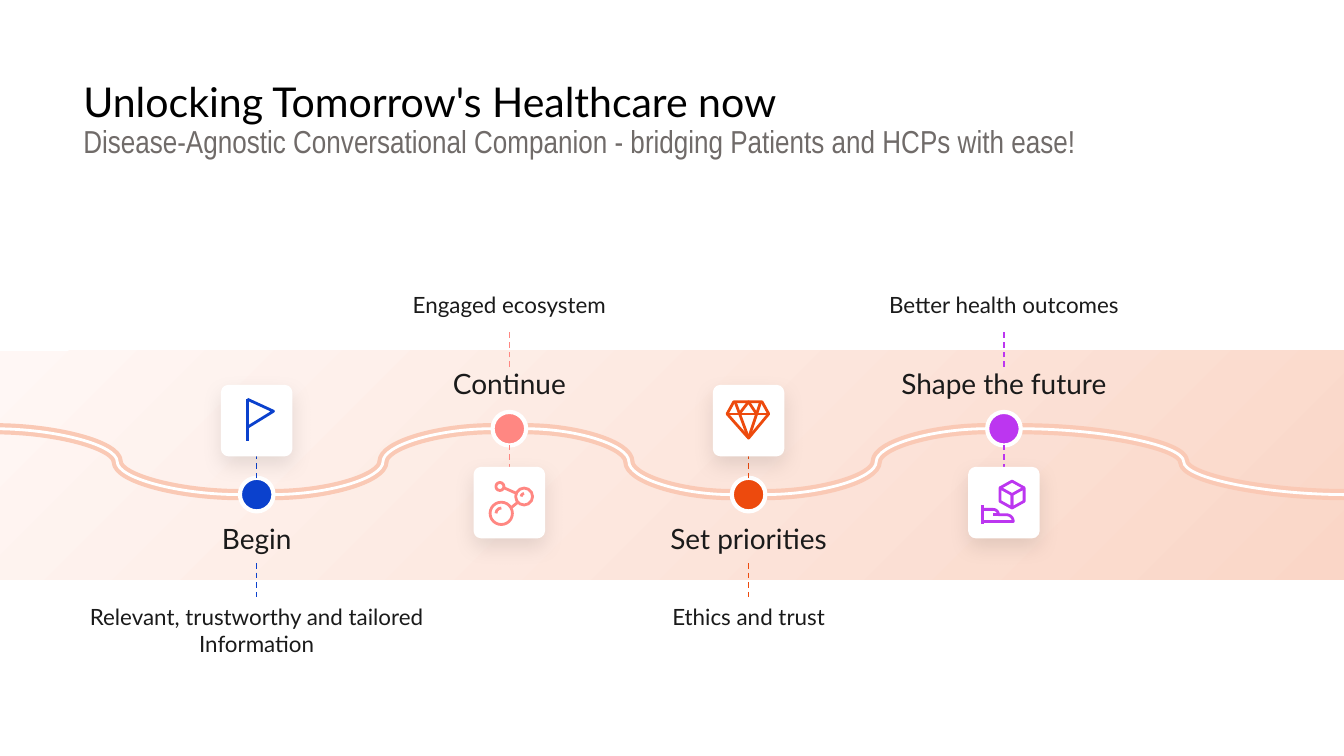
from collections import namedtuple
from math import cos, pi, sin

from lxml import etree
from pptx import Presentation
from pptx.dml.color import RGBColor
from pptx.enum.dml import MSO_LINE
from pptx.enum.shapes import MSO_CONNECTOR as Connector, MSO_SHAPE as Preset
from pptx.enum.text import MSO_ANCHOR, MSO_AUTO_SIZE, PP_ALIGN
from pptx.oxml.ns import qn
from pptx.util import Inches, Pt

# Grid: 100 columns by 56.25 square rows
COLUMNS, ROWS = 100, 56.25
HIGH, LOW = 31.9, 36.8          # the two levels of the wave
NODE, CARD, LABEL = 2.5, 5, 28.9

BLACK = RGBColor(0x00, 0x00, 0x00)
WHITE = RGBColor(0xFF, 0xFF, 0xFF)
INK = RGBColor(0x1A, 0x1A, 0x1A)
GREY = RGBColor(0x70, 0x6B, 0x69)
BLUSH = RGBColor(0xFF, 0xF7, 0xF5)
PEACH = RGBColor(0xFA, 0xD6, 0xC7)
WAVE = RGBColor(0xFA, 0xC9, 0xB5)
BLUE = RGBColor(0x0B, 0x41, 0xCD)
CORAL = RGBColor(0xFF, 0x87, 0x82)
ORANGE = RGBColor(0xED, 0x4A, 0x0D)
PURPLE = RGBColor(0xBC, 0x36, 0xF0)

# Rows of the parts of a milestone, by its level on the wave
Level = namedtuple("Level", "node heading caption card stem leader")
LEVELS = {
    LOW: Level(LOW, 38.8, 43.9, 28.8, (35.6, 33.7), (41.9, 44.4)),
    HIGH: Level(HIGH, 27.3, 20.7, 34.9, (33.1, 34.9), (27.3, 24.7)),
}


def grid(*units):
    """Turn grid units into lengths."""
    return [Inches(unit * 10 / COLUMNS) for unit in units]


def write(frame, text, font="Lato", size=12, color=INK, align=PP_ALIGN.LEFT,
          insets=(0, 0, 0, 0), spacing=None, after=None):
    frame.word_wrap = True
    frame.auto_size = MSO_AUTO_SIZE.NONE
    frame.vertical_anchor = MSO_ANCHOR.TOP
    (frame.margin_left, frame.margin_top,
     frame.margin_right, frame.margin_bottom) = grid(*insets)
    frame.text = text
    paragraph = frame.paragraphs[0]
    paragraph.alignment = align
    if spacing:
        paragraph.line_spacing = spacing
    if after:
        paragraph.space_after = Pt(after)
    run_font = paragraph.runs[0].font
    run_font.name, run_font.size, run_font.color.rgb = font, Pt(size), color


def add_label(slide, text, center, top, height, **style):
    box = slide.shapes.add_textbox(*grid(center - LABEL / 2, top, LABEL, height))
    write(box.text_frame, text, align=PP_ALIGN.CENTER, after=10, **style)


def add_preset(shapes, kind, box, fill=None, line=None, width=2.25):
    shape = shapes.add_shape(kind, *grid(*box))
    shape.shadow.inherit = False
    if fill is None:
        shape.fill.background()
    else:
        shape.fill.solid()
        shape.fill.fore_color.rgb = fill
    if line is None:
        shape.line.fill.background()
    else:
        shape.line.color.rgb, shape.line.width = line, Pt(width)
    return shape


def add_line(shapes, start, end, color, width, kind=Connector.STRAIGHT, dash=None):
    line = shapes.add_connector(kind, *grid(*start, *end))
    line.line.color.rgb, line.line.width = color, Pt(width)
    if dash:
        line.line.dash_style = dash
    etree.SubElement(line._element.spPr, qn("a:effectLst"))


def add_card(slide, center, top):
    card = add_preset(slide.shapes, Preset.ROUNDED_RECTANGLE,
                      (center - CARD / 2, top, CARD, CARD), WHITE, WHITE)
    card.adjustments[0] = 0.08
    effects = card._element.spPr.find(qn("a:effectLst"))
    shadow = etree.SubElement(effects, qn("a:outerShdw"), blurRad=str(Pt(11.2)),
                              dist=str(Pt(4.5)), dir="5400000", rotWithShape="0")
    tint = etree.SubElement(shadow, qn("a:srgbClr"), val=str(BLACK))
    etree.SubElement(tint, qn("a:alpha"), val="10000")


class Icon:
    """A group of strokes placed around the middle of a card."""

    def __init__(self, slide, x, y, color):
        self.shapes = slide.shapes.add_group_shape().shapes
        self.x, self.y, self.color = x, y, color

    def stroke(self, *points, close=False):
        points = [(self.x + x, self.y + y) for x, y in points]
        if len(points) == 2:
            add_line(self.shapes, *points, self.color, 1.5)
            return
        start, *others = [grid(*point) for point in points]
        builder = self.shapes.build_freeform(*start)
        builder.add_line_segments(others, close=close)
        shape = builder.convert_to_shape()
        shape.shadow.inherit = False
        shape.fill.background()
        shape.line.color.rgb, shape.line.width = self.color, Pt(1.5)

    def ring(self, x, y, radius, kind=Preset.OVAL):
        box = (self.x + x - radius, self.y + y - radius, 2 * radius, 2 * radius)
        return add_preset(self.shapes, kind, box, line=self.color, width=1.5)

    def glint(self, x, y, radius):
        arc = self.ring(x, y, radius, Preset.ARC)
        arc.adjustments[0], arc.adjustments[1] = 108, 162  # 180 to 270 degrees


def quarter(x, y, radius, steps=6):
    """Points of a quarter circle, from its right end up to its top."""
    angles = [pi / 2 * step / steps for step in range(steps + 1)]
    return [(x + radius * cos(angle), y - radius * sin(angle)) for angle in angles]


def draw_flag(icon):
    icon.stroke((-0.7, -1.6), (-0.7, 1.5))
    icon.stroke((-0.7, 0.5), (1.25, -0.7), (-0.7, -1.6))


def draw_molecule(icon):
    for x, y, radius in ((-0.6, 0.8, 0.83), (1.1, -0.45, 0.63), (-0.7, -1.2, 0.3)):
        icon.ring(x, y, radius)
    icon.glint(-0.6, 0.8, 0.4)
    icon.glint(1.1, -0.45, 0.22)
    icon.stroke((0.1, 0.4), (0.6, 0))
    icon.stroke((0.5, -0.7), (-0.4, -1.1))


def draw_diamond(icon):
    icon.stroke((-1.1, -1.4), (1, -1.4), (1.5, -0.5), (0, 1.3), (-1.6, -0.5), close=True)
    for x in (-1, 0.9):
        icon.stroke((x, -1.4), (0, 1.3))
    icon.stroke((-1.6, -0.5), (1.5, -0.5))
    icon.stroke((-0.7, -0.5), (0, -1.4), (0.6, -0.5))


def draw_offered_box(icon):
    for side in (-0.3, 1.5):
        icon.stroke((0.6, -0.6), (side, -1.1), (side, -0.1), (0.6, 0.4), close=True)
    icon.stroke((1.5, -1.1), (0.6, -1.6), (-0.3, -1.1))
    icon.stroke((-1.6, 0.2), (-1.6, 1.6))
    icon.stroke((-1.6, 1.4), *quarter(0.2, 1.4, 0.5), *quarter(-0.8, 0.9, 0.4), (-1.6, 0.5))
    icon.stroke((-0.8, 0.9), (-0.4, 0.9))


# Column, level, colour, heading, caption, caption height, icon
MILESTONES = [
    (19.1, LOW, BLUE, "Begin",
     "Relevant, trustworthy and tailored Information", 6.1, draw_flag),
    (37.9, HIGH, CORAL, "Continue", "Engaged ecosystem", 4, draw_molecule),
    (55.7, LOW, ORANGE, "Set priorities", "Ethics and trust", 4, draw_diamond),
    (74.7, HIGH, PURPLE, "Shape the future", "Better health outcomes", 4, draw_offered_box),
]


def add_titles(slide):
    title = slide.shapes.title
    title.left, title.top, title.width, title.height = grid(6.2, 4.7, 81.3, 6.3)
    write(title.text_frame, "Unlocking Tomorrow's Healthcare now",
          size=22, color=BLACK, insets=(0, 1, 1, 1))
    subtitle = slide.shapes.add_textbox(*grid(6.2, 7.9, 81.3, 4.8))
    write(subtitle.text_frame,
          "Disease-Agnostic Conversational Companion - bridging Patients and HCPs with ease!",
          font="Arial Narrow", size=17, color=GREY, insets=(0, 1, 1, 1), spacing=1.05)


def add_band(slide):
    band = add_preset(slide.shapes, Preset.RECTANGLE, (0, 26.1, COLUMNS, 17))
    band.fill.gradient()
    band.fill.gradient_angle = 315
    for stop, color in zip(band.fill.gradient_stops, (BLUSH, PEACH)):
        stop.color.rgb = color


def add_wave(slide):
    ends = [(-0.4, HIGH)]
    for x, level, *_ in MILESTONES:
        ends += [(x - NODE / 2, level), (x + NODE / 2, level)]
    ends.append((100.2, LOW))
    for color, width in ((WAVE, 6), (WHITE, 1.5)):
        for start, end in zip(ends[::2], ends[1::2]):
            add_line(slide.shapes, start, end, color, width, Connector.CURVE)


def add_milestone(slide, x, level, color, heading, caption, height, draw_icon):
    rows = LEVELS[level]
    add_preset(slide.shapes, Preset.OVAL,
               (x - NODE / 2, rows.node - NODE / 2, NODE, NODE), color, WHITE)
    for top, bottom in (rows.stem, rows.leader):
        add_line(slide.shapes, (x, top), (x, bottom), color, 0.75, dash=MSO_LINE.DASH)
    add_label(slide, heading, x, rows.heading, 2.5, size=15)
    add_label(slide, caption, x, rows.caption, height, insets=(1, 1, 1, 1))
    add_card(slide, x, rows.card)
    draw_icon(Icon(slide, x, rows.card + CARD / 2, color))


def main():
    presentation = Presentation()
    presentation.slide_width, presentation.slide_height = grid(COLUMNS, ROWS)
    slide = presentation.slides.add_slide(presentation.slide_layouts[5])
    add_band(slide)
    add_wave(slide)
    add_titles(slide)
    for milestone in MILESTONES:
        add_milestone(slide, *milestone)
    presentation.save("out.pptx")


if __name__ == "__main__":
    main()
